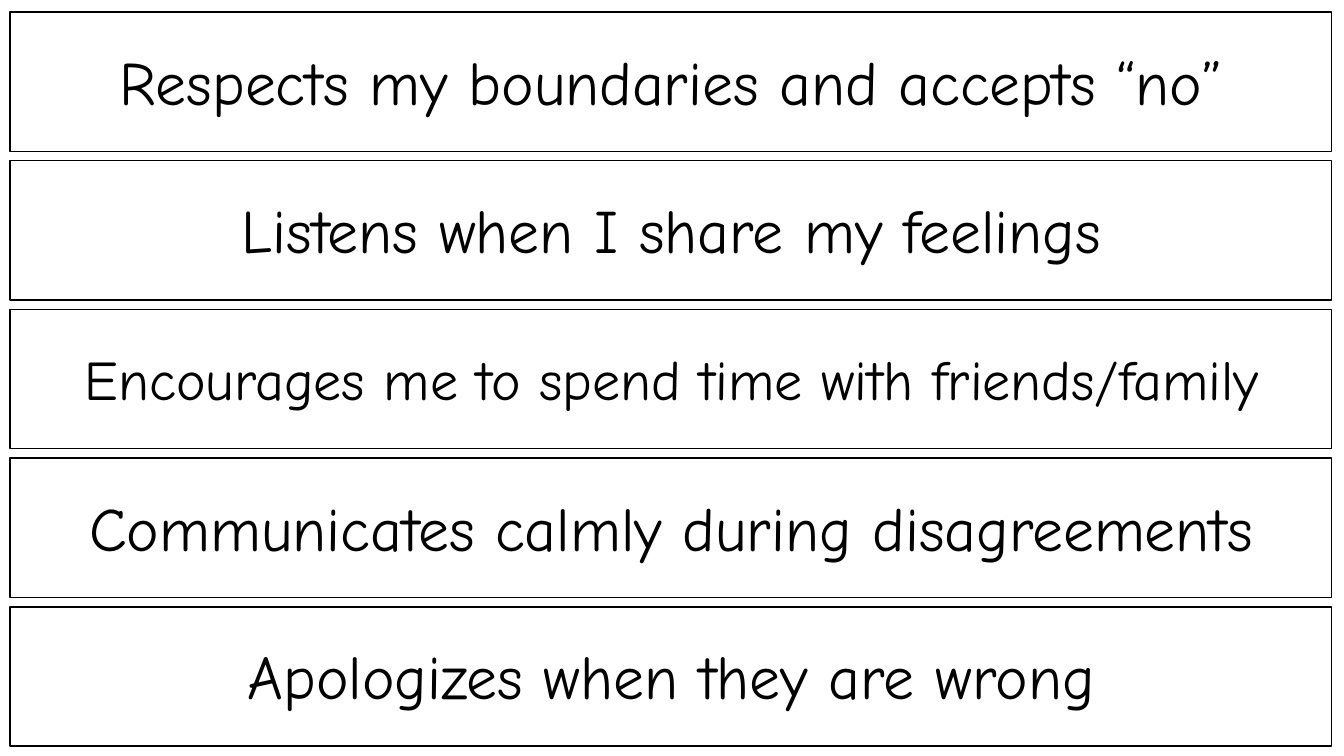
"""Build a slide of five outlined cards describing healthy relationship behaviours."""
import pptx
import pptx.util
import pptx.dml.color
import pptx.enum.shapes
import pptx.enum.text

Pt = pptx.util.Pt

CARDS = [
    ("Respects my boundaries and accepts “no”", 44, 944),
    ("Listens when I share my feelings", 44, 944),
    ("Encourages me to spend time with friends/family", 40, 952),
    ("Communicates calmly during disagreements", 44, 944),
    ("Apologizes when they are wrong", 44, 738),
]
FONT = "Comic Neue"
BLACK, WHITE = "000000", "FFFFFF"
SLIDE_WIDTH, SLIDE_HEIGHT = 960, 540
CARD_LEFT, CARD_TOP, CARD_WIDTH, CARD_HEIGHT = 7.2, 8.64, 944, 99.4
CARD_PITCH = 106.2
TEXT_CENTER = 479.8
TEXT_RISE = 0.7


def color(value):
    return pptx.dml.color.RGBColor.from_string(value)


def add_card(page, top):
    card = page.shapes.add_shape(
        pptx.enum.shapes.MSO_SHAPE.RECTANGLE,
        Pt(CARD_LEFT), Pt(top), Pt(CARD_WIDTH), Pt(CARD_HEIGHT))
    card.shadow.inherit = False
    card.fill.solid()
    card.fill.fore_color.rgb = color(WHITE)
    card.line.color.rgb = color(BLACK)
    card.line.width = Pt(1)


def add_label(page, text, size, width, card_top):
    height = size * 1.2 + 7.2
    top = card_top + (CARD_HEIGHT - height) / 2 - TEXT_RISE
    box = page.shapes.add_textbox(
        Pt(TEXT_CENTER - width / 2), Pt(top), Pt(width), Pt(height))
    frame = box.text_frame
    frame.word_wrap = True
    frame.auto_size = pptx.enum.text.MSO_AUTO_SIZE.SHAPE_TO_FIT_TEXT
    frame.text = text
    para = frame.paragraphs[0]
    para.alignment = pptx.enum.text.PP_ALIGN.CENTER
    span = para.runs[0]
    span.font.name = FONT
    span.font.size = Pt(size)
    span.font.color.rgb = color(BLACK)


def main():
    deck = pptx.Presentation()
    deck.slide_width, deck.slide_height = Pt(SLIDE_WIDTH), Pt(SLIDE_HEIGHT)
    page = deck.slides.add_slide(deck.slide_layouts[6])
    for row, (text, size, width) in enumerate(CARDS):
        top = CARD_TOP + row * CARD_PITCH
        add_card(page, top)
        add_label(page, text, size, width, top)
    deck.save("out.pptx")


if __name__ == "__main__":
    main()
